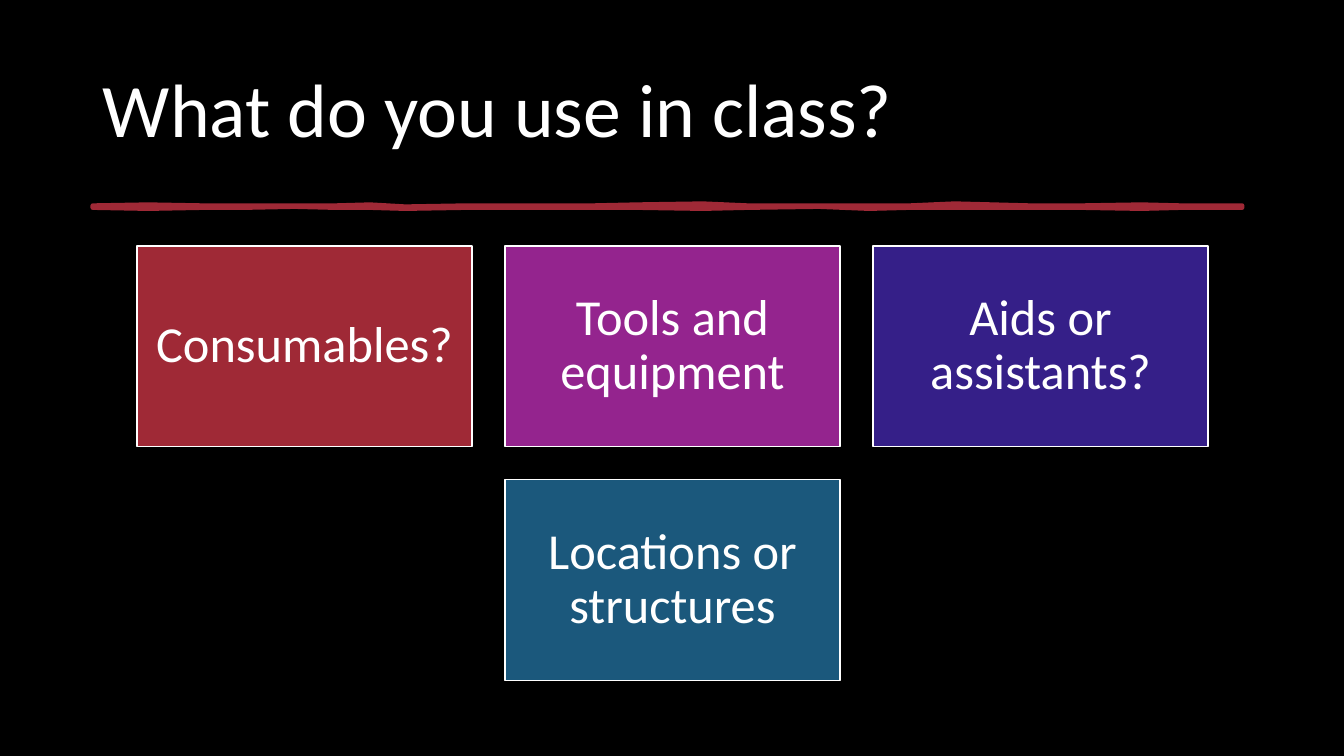
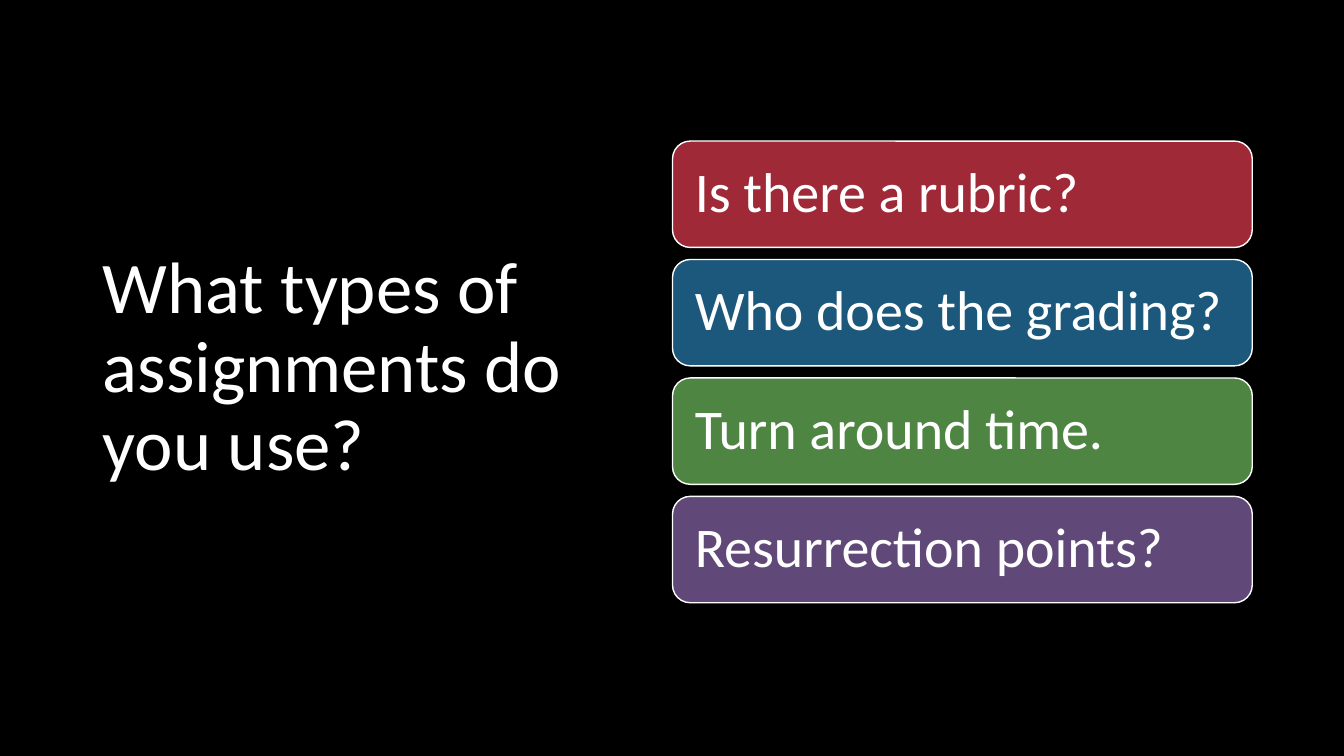
from lxml import etree
from pptx import Presentation
from pptx.dml.color import RGBColor
from pptx.enum.shapes import MSO_SHAPE
from pptx.enum.text import MSO_ANCHOR, MSO_AUTO_SIZE, PP_ALIGN
from pptx.oxml.ns import qn
from pptx.util import Inches, Pt

BLACK = RGBColor(0x00, 0x00, 0x00)
WHITE = RGBColor(0xFF, 0xFF, 0xFF)
RED = RGBColor(0x9F, 0x29, 0x36)
MAGENTA = RGBColor(0x94, 0x24, 0x8E)
INDIGO = RGBColor(0x35, 0x1F, 0x88)
BLUE = RGBColor(0x1B, 0x58, 0x7C)
GREEN = RGBColor(0x4E, 0x85, 0x42)
PURPLE = RGBColor(0x60, 0x48, 0x78)

RECTANGLE = MSO_SHAPE.RECTANGLE
ROUNDED = MSO_SHAPE.ROUNDED_RECTANGLE
MIDDLE = MSO_ANCHOR.MIDDLE
NO_AUTOFIT = MSO_AUTO_SIZE.NONE
LEFT = PP_ALIGN.LEFT
CENTER = PP_ALIGN.CENTER

FONT = "Calibri"
TITLE_ONLY = 5
MARGIN = 0.92

TILES = [
    ("Consumables?", RED),
    ("Tools and equipment", MAGENTA),
    ("Aids or assistants?", INDIGO),
    ("Locations or structures", BLUE),
]
BARS = [
    ("Is there a rubric?", RED),
    ("Who does the grading?", BLUE),
    ("Turn around time.", GREEN),
    ("Resurrection points?", PURPLE),
]
BRUSH_PROFILE = [
    (0, 0, 0.02), (0.55, -0.01, 0.03), (1.1, 0, 0.02), (1.5, 0, 0.02),
    (2.0, 0, 0.01), (2.4, 0, 0.02), (2.75, -0.01, 0.02), (3.1, 0.01, 0.03),
    (3.7, 0, 0.02), (4.4, 0, 0.02), (4.95, 0, 0.02), (5.4, -0.01, 0.02),
    (6.05, -0.02, 0.03), (6.5, 0, 0.02), (7.2, 0, 0.01), (7.7, 0, 0.03),
    (8.1, 0, 0.02), (8.55, -0.02, 0.02), (9.3, 0, 0.02), (9.8, 0, 0.02),
    (10.4, -0.01, 0.03), (10.8, 0, 0.02), (11.1, 0, 0.02), (11.4, 0, 0.02),
]


def set_attributes(target, values):
    """Set each named value on the target."""
    for name, value in values.items():
        setattr(target, name, value)


def write_text(shape, text, size, alignment, inset):
    """Write one white paragraph, centred vertically in the shape."""
    frame = shape.text_frame
    frame.text = text
    sides = ("margin_left", "margin_right", "margin_top", "margin_bottom")
    set_attributes(frame, {
        "word_wrap": True,
        "auto_size": NO_AUTOFIT,
        "vertical_anchor": MIDDLE,
        **dict.fromkeys(sides, Inches(inset)),
    })
    para = frame.paragraphs[0]
    set_attributes(para, {"alignment": alignment, "line_spacing": 0.9})
    set_attributes(para.runs[0].font, {"name": FONT, "size": Pt(size)})
    para.runs[0].font.color.rgb = WHITE


def paint(shape, fill, line, width):
    """Give the shape a solid fill and outline without a shadow."""
    shape.shadow.inherit = False
    shape.fill.solid()
    shape.fill.fore_color.rgb = fill
    shape.line.color.rgb = line
    shape.line.width = Pt(width)


def add_page(deck, title, box, size):
    """Add a page with its title placed in the box."""
    page = deck.slides.add_slide(deck.slide_layouts[TITLE_ONLY])
    holder = page.shapes.title
    names = ("left", "top", "width", "height")
    set_attributes(holder, dict(zip(names, map(Inches, box))))
    write_text(holder, title, size, LEFT, 0.1)
    return page


def add_card(page, kind, box, text, fill, size, alignment, inset):
    """Add a coloured card with a white outline and text."""
    card = page.shapes.add_shape(kind, *map(Inches, box))
    paint(card, fill, WHITE, 1)
    write_text(card, text, size, alignment, inset)


def add_brush_rule(page, left, top):
    """Draw an uneven brush stroke from the given corner."""
    upper = [(left + x, top + high) for x, high, low in BRUSH_PROFILE]
    lower = [(left + x, top + low) for x, high, low in BRUSH_PROFILE]
    outline = [(Inches(x), Inches(y)) for x, y in upper + lower[::-1]]
    builder = page.shapes.build_freeform(*outline[0])
    builder.add_line_segments(outline[1:], close=True)
    stroke = builder.convert_to_shape()
    paint(stroke, RED, RED, 3.25)
    etree.SubElement(stroke.line._get_or_add_ln(), qn("a:round"))


def add_tile_grid(page, box, tiles, columns=3, gap=0.33):
    """Fill the box with rows of tiles, centring a short last row."""
    left, top, width, height = box
    rows = -(-len(tiles) // columns)
    tile_width = (width - gap * (columns - 1)) / columns
    tile_height = (height - gap * (rows - 1)) / rows
    for index, (text, fill) in enumerate(tiles):
        row, column = divmod(index, columns)
        in_row = min(columns, len(tiles) - row * columns)
        x = left + (column + (columns - in_row) / 2) * (tile_width + gap)
        y = top + row * (tile_height + gap)
        tile = (x, y, tile_width, tile_height)
        add_card(page, RECTANGLE, tile, text, fill, 36, CENTER, 0.15)


def add_bar_stack(page, box, bars, gap=0.12):
    """Stack rounded bars evenly down the box."""
    left, top, width, height = box
    bar_height = (height - gap * (len(bars) - 1)) / len(bars)
    for index, (text, fill) in enumerate(bars):
        bar = (left, top + index * (bar_height + gap), width, bar_height)
        add_card(page, ROUNDED, bar, text, fill, 40, LEFT, 0.17)


def build_class_page(deck):
    """Build the page of things used in class."""
    box = (MARGIN, 0.4, 11.5, 1.45)
    page = add_page(deck, "What do you use in class?", box, 54)
    add_brush_rule(page, MARGIN, 2.04)
    add_tile_grid(page, (1.36, 2.44, 10.62, 4.31), TILES)


def build_assignments_page(deck):
    """Build the page of questions on assignments."""
    box = (MARGIN, 0.61, 5.32, 6.09)
    page = add_page(deck, "What types of assignments do you use?", box, 52)
    add_bar_stack(page, (6.67, 1.4, 5.75, 4.58), BARS)


def main():
    """Build and save the deck."""
    deck = Presentation()
    deck.slide_width = Inches(13.33)
    deck.slide_height = Inches(7.5)
    background = deck.slide_master.background.fill
    background.solid()
    background.fore_color.rgb = BLACK
    build_class_page(deck)
    build_assignments_page(deck)
    deck.save("out.pptx")


if __name__ == "__main__":
    main()
